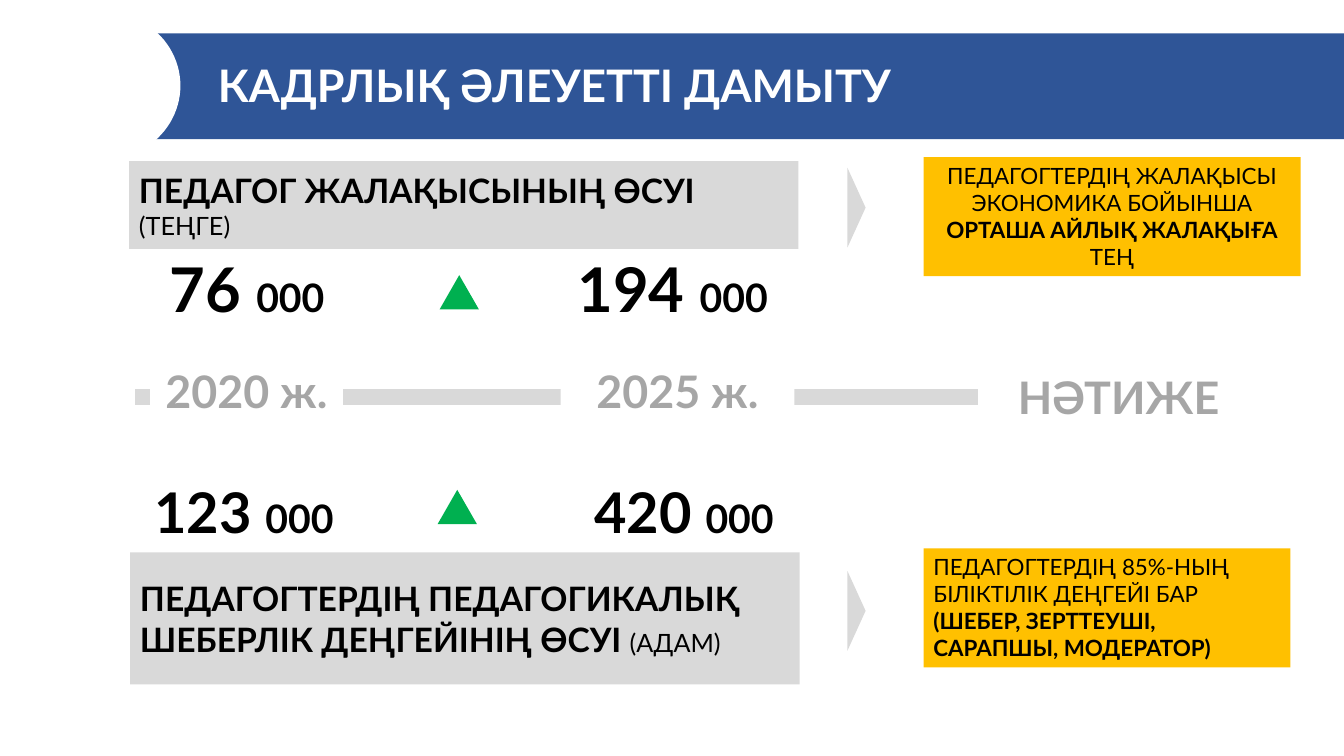
from pptx import Presentation
from pptx import util as u
from pptx.dml.color import RGBColor
from pptx.enum import shapes, text
from lxml import etree

PX = 9144  # 100 px to the inch
FONT = "Lato"
COLOURS = {"blue": "2F5597", "white": "FFFFFF", "grey": "D9D9D9", "label": "A6A6A6",
           "yellow": "FFC000", "green": "00B050", "black": "000000"}
KIND = shapes.MSO_SHAPE
LEFT, CENTER = text.PP_ALIGN.LEFT, text.PP_ALIGN.CENTER
TOP, MIDDLE = text.MSO_ANCHOR.TOP, text.MSO_ANCHOR.MIDDLE


def colour(name):
    return RGBColor.from_string(COLOURS[name])


def add_block(kind, at, fill, paras=(), align=CENTER, anchor=TOP, ink="black"):
    """Add a shape; each paragraph is a list of (text, size, bold) runs."""
    box = page.shapes.add_shape(kind, *(n * PX for n in at))
    box.shadow.inherit = False
    box.line.fill.background()
    if fill:
        box.fill.solid()
        box.fill.fore_color.rgb = colour(fill)
    else:
        box.fill.background()
    frame = box.text_frame
    frame.word_wrap = True
    frame.vertical_anchor = anchor
    for i, runs in enumerate(paras):
        para = frame.paragraphs[0] if i == 0 else frame.add_paragraph()
        para.alignment = align
        para.font.name = FONT
        para.font.color.rgb = colour(ink)
        for words, size, bold in runs:
            span = para.add_run()
            span.text = words
            span.font.size = u.Pt(size)
            span.font.bold = bold
    return box


deck = Presentation()
deck.slide_width, deck.slide_height = 1333 * PX, 750 * PX
page = deck.slides.add_slide(deck.slide_layouts[5])

# Header band with a round notch, placed behind the title
title = page.shapes.title
band = add_block(KIND.RECTANGLE, (92, 33, 1241, 105), "blue")
notch = add_block(KIND.OVAL, (23, 11, 156, 148), "white")
for part in (band, notch):
    title.element.addprevious(part.element)

# Title
title.left, title.top, title.width, title.height = (n * PX for n in (204, 40, 984, 95))
frame = title.text_frame
frame.text = "КАДРЛЫҚ ӘЛЕУЕТТІ ДАМЫТУ"
frame.auto_size = text.MSO_AUTO_SIZE.NONE
frame.word_wrap = True
frame.vertical_anchor = MIDDLE
frame.margin_left = frame.margin_right = 12 * PX
frame.margin_top = frame.margin_bottom = 6 * PX
para = frame.paragraphs[0]
para.alignment = LEFT
para.line_spacing = 0.9
para.font.name = FONT
para.font.size = u.Pt(32)
para.font.bold = True
para.font.color.rgb = colour("white")

# Timeline with its labels
timeline = page.shapes.add_connector(shapes.MSO_CONNECTOR.STRAIGHT,
                                     134 * PX, 394 * PX, 1156 * PX, 394 * PX)
timeline.line.color.rgb = colour("grey")
timeline.line.width = u.Pt(11.25)
etree.SubElement(timeline.element.spPr,
                 "{http://schemas.openxmlformats.org/drawingml/2006/main}effectLst")
for label, at in (("2020 ж.", (149, 356, 191, 64)),
                  ("2025 ж.", (556, 356, 232, 64)),
                  ("НӘТИЖЕ", (970, 362, 279, 64))):
    add_block(KIND.RECTANGLE, at, "white", [[(label, 32, True)]], ink="label")

# Figures in thousands
for number, size, at in (("76", 44, (129, 244, 232, 84)),
                         ("194", 44, (545, 244, 244, 84)),
                         ("123", 40, (134, 469, 216, 77)),
                         ("420", 40, (568, 469, 221, 77))):
    page_runs = [(number + " ", size, True), ("000", 28, True)]
    add_block(KIND.RECTANGLE, at, None, [page_runs])

# Indicator headings
for heading, unit, at in (
        ("ПЕДАГОГ ЖАЛАҚЫСЫНЫҢ ӨСУІ ", "(ТЕҢГЕ)", (128, 160, 664, 87)),
        ("ПЕДАГОГТЕРДІҢ ПЕДАГОГИКАЛЫҚ ШЕБЕРЛІК ДЕҢГЕЙІНІҢ ӨСУІ ", "(АДАМ)",
         (129, 548, 664, 131))):
    add_block(KIND.RECTANGLE, at, "grey", [[(heading, 24, True), (unit, 18, False)]],
              LEFT, MIDDLE)

# Results
add_block(KIND.RECTANGLE, (916, 156, 374, 118), "yellow",
          [[("ПЕДАГОГТЕРДІҢ ЖАЛАҚЫСЫ ЭКОНОМИКА БОЙЫНША ", 16, False),
            ("ОРТАША АЙЛЫҚ ЖАЛАҚЫҒА ", 16, True), ("ТЕҢ", 16, False)]])
add_block(KIND.RECTANGLE, (916, 544, 364, 118), "yellow",
          [[("ПЕДАГОГТЕРДІҢ 85%-НЫҢ БІЛІКТІЛІК ДЕҢГЕЙІ БАР", 16, False)],
           [("(ШЕБЕР, ЗЕРТТЕУШІ, САРАПШЫ, МОДЕРАТОР)", 16, True)]], LEFT)

# Growth markers and pointers to the results
for left, top in ((436, 273), (434, 486)):
    add_block(KIND.ISOSCELES_TRIANGLE, (left, top, 39, 34), "green")
for top in (197, 597):
    pointer = add_block(KIND.ISOSCELES_TRIANGLE, (810, top, 79, 18), "grey")
    pointer.rotation = 90

deck.save("out.pptx")
